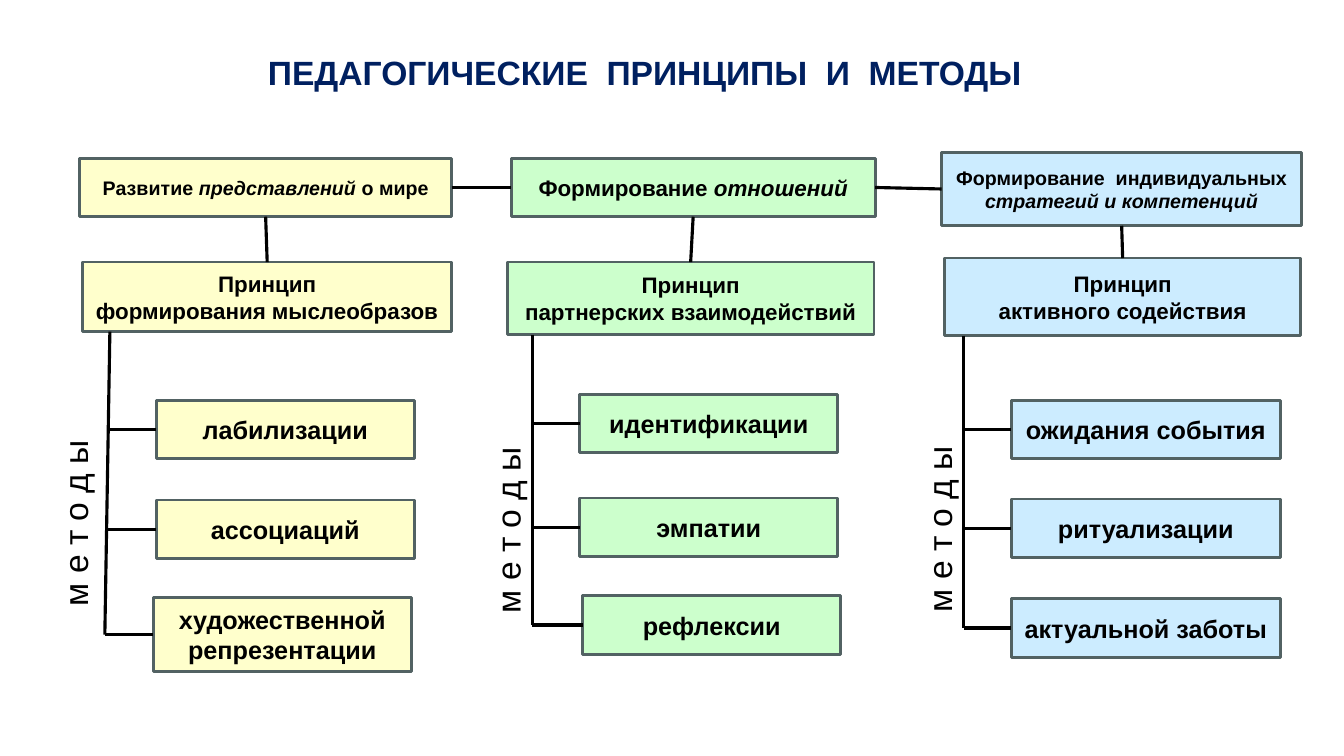
from lxml.etree import SubElement
from pptx import Presentation
from pptx.dml.color import RGBColor
from pptx.enum.shapes import MSO_CONNECTOR, MSO_SHAPE
from pptx.enum.text import MSO_ANCHOR, PP_ALIGN
from pptx.oxml.ns import qn
from pptx.util import Inches, Pt

BOTTOM, LEFT, RIGHT, TOP = 2, 1, 3, 0

# Each paragraph is a list of (text, italic) runs; boxes are left, top, width, height
COLUMNS = [
    {
        "fill": "FFFFCC",
        "goal": ((0.79, 1.57, 3.69, 0.58), 14,
                 [[("Развитие ", False), ("представлений ", True), ("о мире", False)]]),
        "principle": ((0.82, 2.6, 3.66, 0.69), ["Принцип", "формирования мыслеобразов"]),
        "methods": [((1.55, 3.97, 2.56, 0.58), "лабилизации"),
                    ((1.55, 4.96, 2.56, 0.58), "ассоциаций"),
                    ((1.52, 5.93, 2.56, 0.73), "художественной репрезентации")],
        "spine": (1.09, 1.04),
        "label": (-0.54, 5.08),
    },
    {
        "fill": "CCFFCC",
        "goal": ((5.07, 1.57, 3.61, 0.58), 16,
                 [[("Формирование ", False), ("отношений", True)]]),
        "principle": ((5.03, 2.6, 3.64, 0.72), ["Принцип", "партнерских взаимодействий"]),
        "methods": [((5.75, 3.91, 2.56, 0.58), "идентификации"),
                    ((5.75, 4.94, 2.56, 0.58), "эмпатии"),
                    ((5.78, 5.91, 2.56, 0.58), "рефлексии")],
        "spine": (5.28, 5.28),
        "label": (3.75, 5.15),
    },
    {
        "fill": "CCECFF",
        "goal": ((9.34, 1.51, 3.57, 0.73), 14,
                 [[("Формирование  индивидуальных", False)],
                  [("стратегий и компетенций", True)]]),
        "principle": ((9.37, 2.56, 3.53, 0.77), ["Принцип", "активного содействия"]),
        "methods": [((10.03, 3.97, 2.67, 0.58), "ожидания события"),
                    ((10.03, 4.95, 2.67, 0.58), "ритуализации"),
                    ((10.03, 5.94, 2.67, 0.58), "актуальной заботы")],
        "spine": (9.56, 9.56),
        "label": (8.03, 5.14),
    },
]


def color(value):
    return RGBColor.from_string(value)


def plain(lines):
    return [[(line, False)] for line in lines]


class Diagram:
    font_name = "Arial"
    ink = "000000"
    border = "526263"

    def __init__(self, slide):
        self.slide = slide

    def add_text(self, shape, paragraphs, size, bold=True, ink=None):
        frame = shape.text_frame
        layout = {"word_wrap": True, "vertical_anchor": MSO_ANCHOR.MIDDLE,
                  "margin_left": Inches(0.05), "margin_right": Inches(0.05),
                  "margin_top": 0, "margin_bottom": 0}
        for name, value in layout.items():
            setattr(frame, name, value)
        for index, runs in enumerate(paragraphs):
            paragraph = frame.add_paragraph() if index else frame.paragraphs[0]
            paragraph.alignment = PP_ALIGN.CENTER
            for text, italic in runs:
                run = paragraph.add_run()
                run.text = text
                style = {"name": self.font_name, "size": Pt(size),
                         "bold": bold, "italic": italic}
                for name, value in style.items():
                    setattr(run.font, name, value)
                run.font.color.rgb = color(ink or self.ink)

    def box(self, place, fill, paragraphs, size):
        shape = self.slide.shapes.add_shape(MSO_SHAPE.RECTANGLE, *map(Inches, place))
        shape.shadow.inherit = False
        shape.fill.solid()
        shape.fill.fore_color.rgb = color(fill)
        shape.line.color.rgb = color(self.border)
        shape.line.width = Pt(2)
        self.add_text(shape, paragraphs, size)
        return shape

    def label(self, place, text, rotation=0, **style):
        shape = self.slide.shapes.add_textbox(*map(Inches, place))
        shape.rotation = rotation
        self.add_text(shape, plain([text]), 24, **style)

    def line(self, start=(0, 0), end=(0, 0), begin_site=None, end_site=None):
        connector = self.slide.shapes.add_connector(
            MSO_CONNECTOR.STRAIGHT, *map(Inches, (*start, *end)))
        connector.line.color.rgb = color(self.ink)
        connector.line.width = Pt(2.25)
        SubElement(connector._element.spPr, qn("a:effectLst"))
        if begin_site:
            connector.begin_connect(*begin_site)
        if end_site:
            connector.end_connect(*end_site)

    def column(self, fill, goal, principle, methods, spine, label):
        # Goal and principle
        goal_place, goal_size, goal_text = goal
        goal_box = self.box(goal_place, fill, goal_text, goal_size)
        place, lines = principle
        principle_box = self.box(place, fill, plain(lines), 16)
        self.line(begin_site=(goal_box, BOTTOM), end_site=(principle_box, TOP))

        # Spine down to the last method
        top = place[1] + place[3]
        last = methods[-1][0]
        bottom = last[1] + last[3] / 2
        self.line((spine[0], top), (spine[1], bottom))

        # Methods branching off the spine
        for method_place, name in methods:
            method_box = self.box(method_place, fill, plain([name]), 18)
            middle = method_place[1] + method_place[3] / 2
            share = (middle - top) / (bottom - top)
            x = spine[0] + (spine[1] - spine[0]) * share
            self.line((x, middle), (method_place[0], middle),
                      end_site=(method_box, LEFT))
        self.label((*label, 2.56, 0.22), "м е т о д ы", rotation=270, bold=False)
        return goal_box


def main():
    presentation = Presentation()
    presentation.slide_width = Inches(13.33)
    presentation.slide_height = Inches(7.5)
    diagram = Diagram(presentation.slides.add_slide(presentation.slide_layouts[6]))

    # Title
    diagram.label((1.65, 0.42, 9.49, 0.58), "ПЕДАГОГИЧЕСКИЕ  ПРИНЦИПЫ  И  МЕТОДЫ",
                  ink="002060")

    # Columns, with their goals joined in a row
    goals = [diagram.column(**column) for column in COLUMNS]
    for left_goal, right_goal in zip(goals, goals[1:]):
        diagram.line(begin_site=(left_goal, RIGHT), end_site=(right_goal, LEFT))

    presentation.save("out.pptx")


if __name__ == "__main__":
    main()
